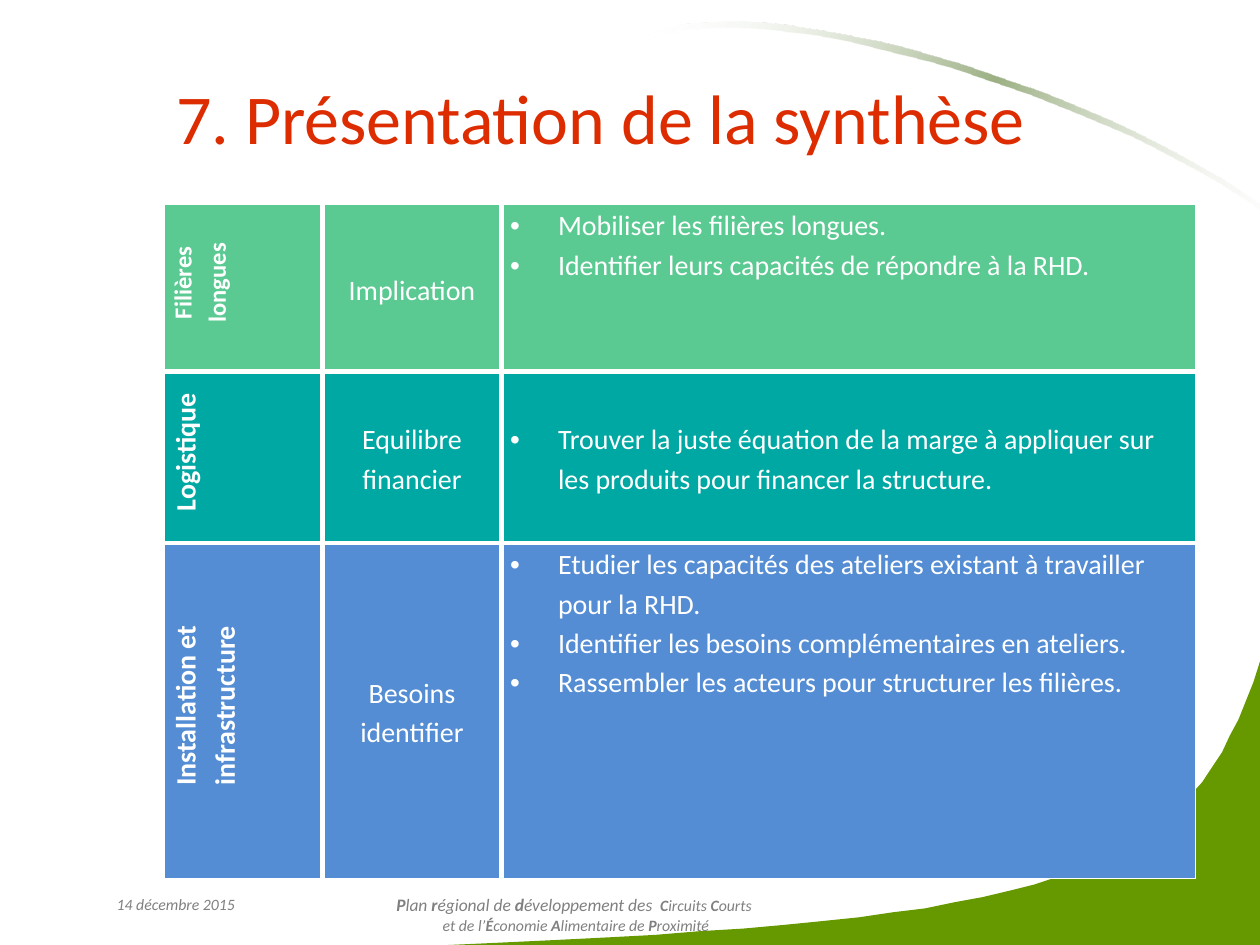
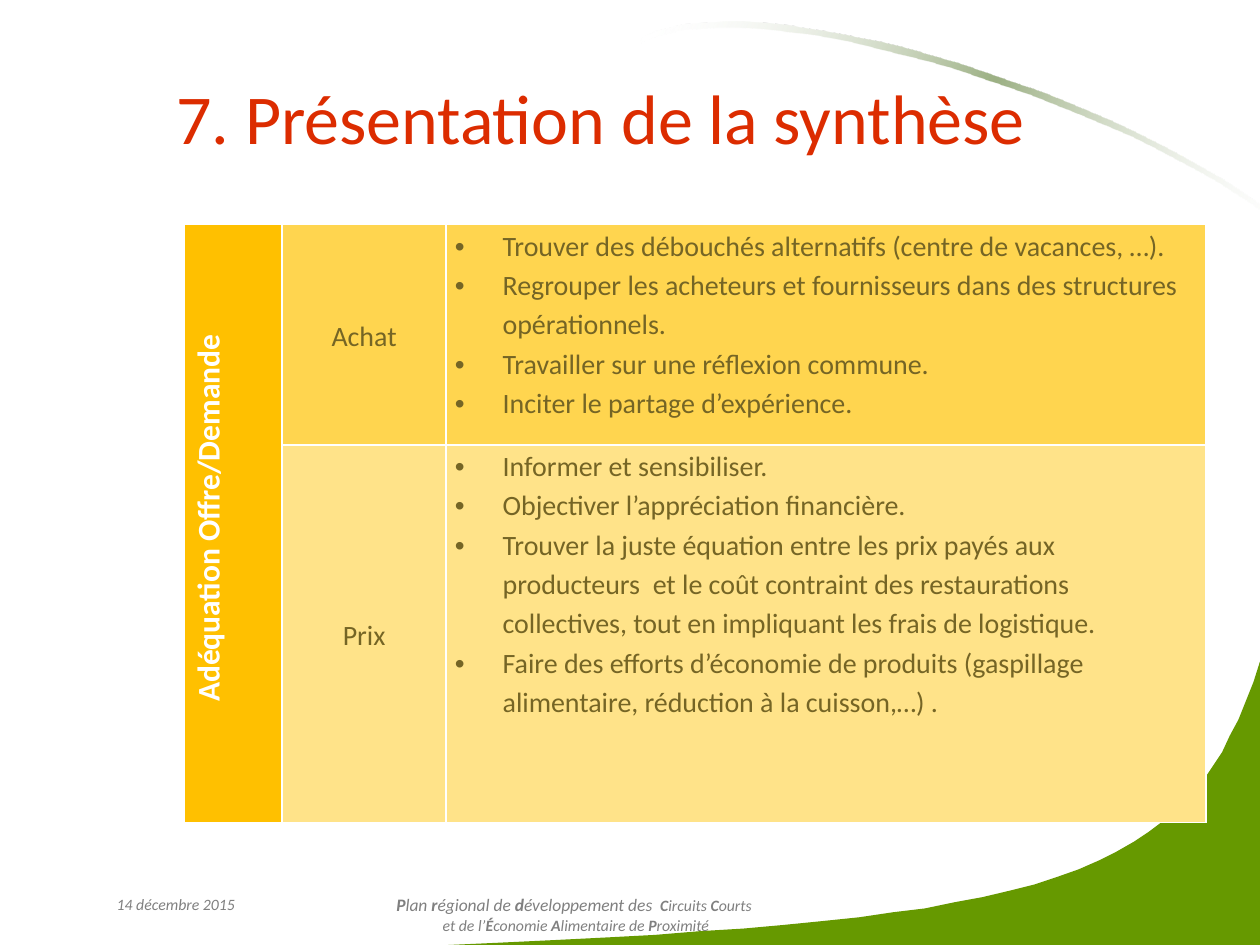
import pptx
import pptx.dml.color
import pptx.enum.text
import pptx.oxml.ns
import pptx.util
import lxml.etree

PX = 9144
ALIGN = pptx.enum.text.PP_ALIGN
ANCHOR = pptx.enum.text.MSO_ANCHOR
qn = pptx.oxml.ns.qn
add_xml = lxml.etree.SubElement


class Theme:
    font = "Calibri"
    white = "FFFFFF"
    title = "DC2C00"
    footer = "808080"
    hill = "669900"
    swoosh = "9CB084"
    mint = "5BC992"
    teal = "00A8A4"
    blue = "548DD4"
    gold = "FFC000"
    amber = "FFD54F"
    cream = "FFE389"
    brown = "756525"
    title_size = 40
    label_size = 18
    body_size = 16
    small_label_size = 14
    footer_size = 10
    date_size = 9


def write(para, text, size, color, bold=False, italic=False, align=None):
    para.alignment = align
    for index, piece in enumerate(text.split("*")):
        if piece:
            span = para.add_run()
            span.text = piece
            span.font.name = Theme.font
            span.font.size = pptx.util.Pt(size)
            span.font.bold = bold or index % 2 == 1
            span.font.italic = italic
            span.font.color.rgb = pptx.dml.color.RGBColor.from_string(color)


def add_box(page, left, top, width, height, anchor=ANCHOR.TOP):
    box = page.shapes.add_textbox(left * PX, top * PX, width * PX, height * PX)
    box.text_frame.word_wrap = True
    box.text_frame.vertical_anchor = anchor
    return box.text_frame


hill_points = [
    (1000, 525), (1000, 750), (356, 750), (400, 748), (442, 746), (482, 744),
    (520, 742), (556, 739), (590, 737), (623, 734), (653, 731), (682, 728),
    (709, 724), (734, 721), (758, 716), (780, 712), (801, 707), (821, 702),
    (839, 696), (856, 690), (872, 683), (886, 676), (900, 668), (912, 660),
    (924, 651), (935, 642), (944, 632), (954, 621), (962, 609), (970, 597),
    (976, 584), (983, 571), (989, 556), (995, 541),
]
swoosh_points = [
    (508, 35), (510, 30), (520, 25), (532, 22), (545, 19), (560, 18), (575, 17),
    (591, 17), (608, 18), (626, 20), (644, 23), (663, 26), (683, 30), (703, 34),
    (723, 39), (743, 45), (764, 51), (784, 58), (804, 65), (825, 72), (845, 80),
    (864, 88), (883, 96), (902, 105), (920, 114), (937, 123), (953, 132),
    (969, 141), (983, 150), (996, 159), (1008, 168), (1019, 177), (1028, 186),
    (1036, 195), (1035, 197), (1027, 189), (1017, 180), (1006, 171), (994, 162),
    (980, 153), (966, 144), (950, 135), (933, 126), (916, 117), (898, 108),
    (879, 100), (860, 92), (840, 84), (820, 76), (800, 69), (779, 62), (759, 55),
    (738, 49), (718, 44), (698, 39), (678, 34), (659, 30), (640, 27), (622, 25),
    (604, 23), (587, 22), (571, 22), (556, 23), (542, 24), (530, 27), (518, 30),
]
footer_lines = [
    [("*P*lan* r*égional de* d*éveloppement des  ", Theme.footer_size),
     ("*C*ircuits *C*ourts ", Theme.date_size)],
    [("et de l’*É*conomie *A*limentaire de *P*roximité", Theme.date_size)],
]
tables = [
    {
        "place": (130, 162), "columns": [126, 142, 551], "rows": [80, 136, 209],
        "inner_line": 3, "ink": Theme.white,
        "content": [
            (("Filières longues", Theme.small_label_size, Theme.mint), "Implication", Theme.mint,
             ANCHOR.TOP,
             ["Mobiliser les filières longues.",
              "Identifier leurs capacités de répondre à la RHD."]),
            (("Logistique", Theme.body_size, Theme.teal), "Equilibre financier", Theme.teal,
             ANCHOR.MIDDLE,
             ["Trouver la juste équation de la marge à appliquer sur les produits "
              "pour financer la structure."]),
            (("Installation et infrastructure", Theme.body_size, Theme.blue), "Besoins identifier",
             Theme.blue, ANCHOR.TOP,
             ["Etudier les capacités des ateliers existant à travailler pour la RHD.",
              "Identifier les besoins complémentaires en ateliers.",
              "Rassembler les acteurs pour structurer les filières."]),
        ],
    },
    {
        "place": (146, 178), "columns": [78, 130, 603], "rows": [175, 242],
        "inner_line": 1, "ink": Theme.brown,
        "content": [
            (("Adéquation Offre/Demande", Theme.label_size, Theme.gold), "Achat", Theme.amber,
             ANCHOR.TOP,
             ["Trouver des débouchés alternatifs (centre de vacances, …).",
              "Regrouper les acheteurs et fournisseurs dans des structures opérationnels.",
              "Travailler sur une réflexion commune.",
              "Inciter le partage d’expérience."]),
            (None, "Prix", Theme.cream, ANCHOR.TOP,
             ["Informer et sensibiliser.",
              "Objectiver l’appréciation financière.",
              "Trouver la juste équation entre les prix payés aux producteurs  et le coût "
              "contraint des restaurations collectives, tout en impliquant les frais de logistique.",
              "Faire des efforts d’économie de produits (gaspillage alimentaire, réduction "
              "à la cuisson,…) ."]),
        ],
    },
]

deck = pptx.Presentation()
deck.slide_width = 1000 * PX
deck.slide_height = 750 * PX

for plan in tables:
    page = deck.slides.add_slide(deck.slide_layouts[6])

    for points in (hill_points, swoosh_points):
        builder = page.shapes.build_freeform(*points[0], scale=PX)
        builder.add_line_segments(points[1:], close=True)
        band = builder.convert_to_shape()
        band.shadow.inherit = False
        band.line.fill.background()
        if points is hill_points:
            band.fill.solid()
            band.fill.fore_color.rgb = pptx.dml.color.RGBColor.from_string(Theme.hill)
        else:
            band.fill.gradient()
            band.fill.gradient_angle = 338.2
            stops = band._element.spPr.find(qn("a:gradFill")).find(qn("a:gsLst"))
            stops.clear()
            for position, color, alpha in ((0, Theme.white, 0), (50, Theme.swoosh, 100),
                                           (100, Theme.white, 0)):
                stop = add_xml(stops, qn("a:gs"), pos=str(position * 1000))
                tint = add_xml(stop, qn("a:srgbClr"), val=color)
                add_xml(tint, qn("a:alpha"), val=str(alpha * 1000))

    date = add_box(page, 78, 705, 123, 40)
    write(date.paragraphs[0], "14 décembre 2015", Theme.date_size, Theme.footer,
          italic=True, align=ALIGN.CENTER)
    footer = add_box(page, 217, 705, 480, 40)
    footer.add_paragraph()
    for para, pieces in zip(footer.paragraphs, footer_lines):
        for text, size in pieces:
            write(para, text, size, Theme.footer, italic=True, align=ALIGN.CENTER)
    title = add_box(page, 130, 30, 845, 125, ANCHOR.MIDDLE)
    write(title.paragraphs[0], "7. Présentation de la synthèse", Theme.title_size, Theme.title)

    columns, rows = plan["columns"], plan["rows"]
    left, top = plan["place"]
    table = page.shapes.add_table(len(rows), len(columns), left * PX, top * PX,
                                  sum(columns) * PX, sum(rows) * PX).table
    table.first_row = table.horz_banding = False
    for column, width in zip(table.columns, columns):
        column.width = width * PX
    for row, height in zip(table.rows, rows):
        row.height = height * PX

    for r, (label, topic, fill, anchor, bullets) in enumerate(plan["content"]):
        for c in range(len(columns)):
            cell = table.cell(r, c)
            cell.margin_left = cell.margin_right = 7 * PX
            cell.margin_top = cell.margin_bottom = 0
            cell.vertical_anchor = anchor if c == 2 else ANCHOR.MIDDLE
            properties = cell._tc.get_or_add_tcPr()
            edges = {"L": c == 0, "R": c == len(columns) - 1,
                     "T": r == 0, "B": r == len(rows) - 1}
            for side, outer in edges.items():
                width = pptx.util.Pt(1 if outer else plan["inner_line"])
                border = add_xml(properties, qn("a:ln" + side), w=str(width))
                add_xml(add_xml(border, qn("a:solidFill")), qn("a:srgbClr"), val=Theme.white)
            cell.fill.solid()
            color = label[2] if c == 0 and label else fill
            cell.fill.fore_color.rgb = pptx.dml.color.RGBColor.from_string(color)
            if c == 0 and not label:
                table.cell(r - 1, 0).merge(cell)
                continue

            texts = ([label[0]] if c == 0 else [topic], bullets)[c == 2]
            for index, text in enumerate(texts):
                frame = cell.text_frame
                para = frame.add_paragraph() if index else frame.paragraphs[0]
                para_properties = para._p.get_or_add_pPr()
                if c == 0:
                    properties.set("vert", "vert270")
                    para_properties.set("marL", str(8 * PX))
                if c == 2:
                    para_properties.set("marL", str(38 * PX))
                    para_properties.set("indent", str(-38 * PX))
                    add_xml(para_properties, qn("a:buFont"), typeface="Arial")
                    add_xml(para_properties, qn("a:buChar"), char="•")
                para.line_spacing = 1.15
                write(para, text, label[1] if c == 0 else Theme.body_size,
                      Theme.white if c == 0 else plan["ink"], bold=c == 0,
                      align=ALIGN.LEFT if c == 2 else ALIGN.CENTER)

deck.save("out.pptx")
